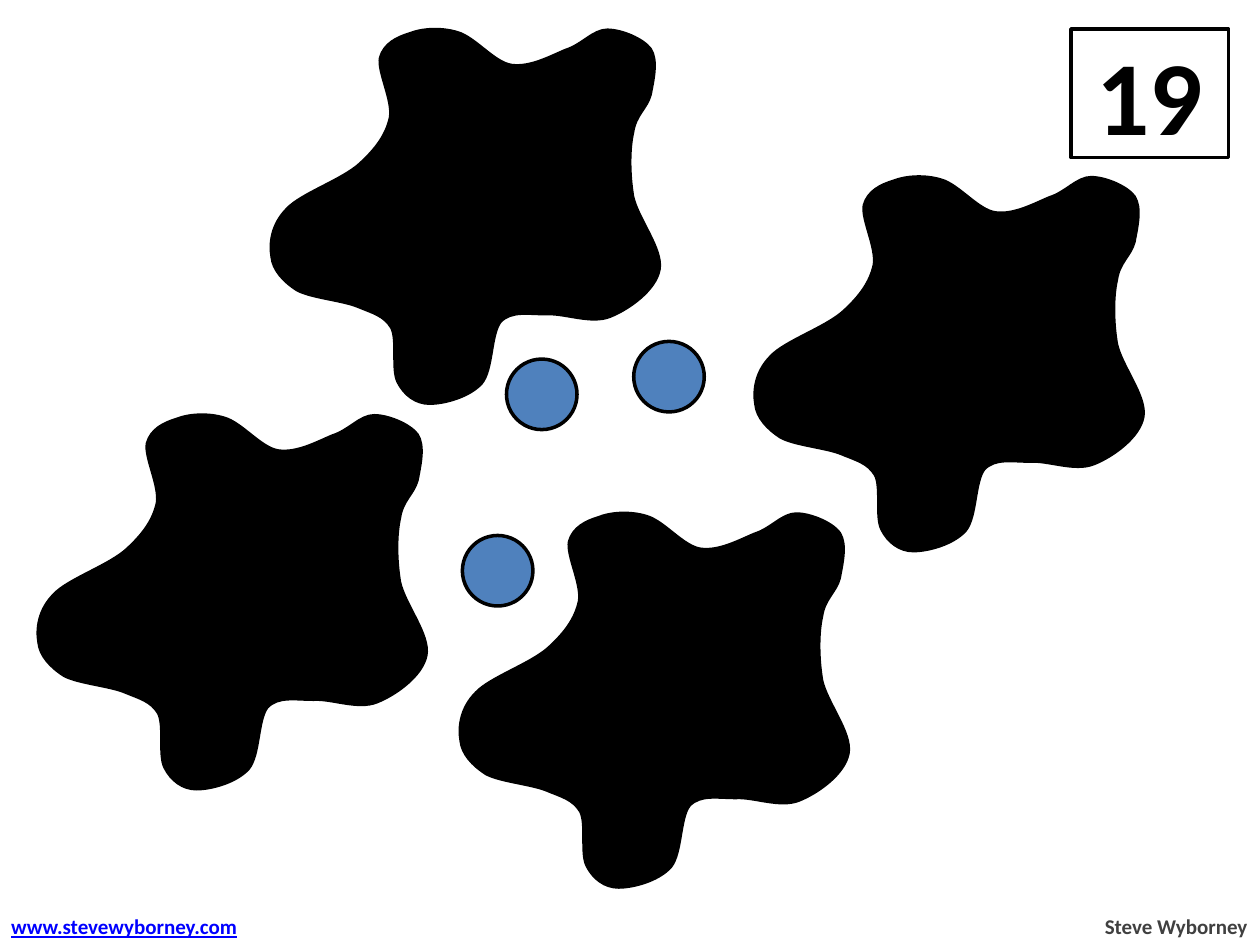
from dataclasses import dataclass

from lxml.etree import Element
from pptx import Presentation
from pptx.dml.color import RGBColor as RGB
from pptx.enum.shapes import MSO_SHAPE as Shape
from pptx.enum.text import MSO_ANCHOR as Anchor, MSO_AUTO_SIZE as AutoSize, PP_ALIGN as Align
from pptx.oxml.ns import qn
from pptx.util import Inches, Pt


@dataclass(frozen=True)
class Theme:
    font: str = "Calibri"
    paper: str = "FFFFFF"
    ink: str = "000000"
    dot: str = "4F81BD"
    credit: str = "404040"
    link: str = "0000FF"
    total_size: int = 60
    footer_size: int = 12
    outline: int = 2


THEME = Theme()

TOTAL = "19"
TOTAL_BOX = (8.5, 0.23, 1.25, 1.02)
FOOTERS = [
    ("Steve Wyborney", (8.66, 7.2, 1.34, 0.3), dict(color=THEME.credit, align=Align.RIGHT)),
    ("www.stevewyborney.com", (-0.01, 7.2, 2.05, 0.3), dict(color=THEME.link, underline=True)),
]

DOT_SIZE = 0.56
DOTS = [
    (3.67, 4.25), (4.1, 5.42), (2.58, 3.65), (5.9, 4.23), (3.61, 1.94),
    (4.02, 2.85), (5.85, 5.4), (7.08, 3.57), (5.03, 2.71), (7.02, 1.66),
    (3.28, 0.46), (1.34, 3.52), (2.63, 4.93), (4.78, 4.37), (2.36, 1.6),
    (7.85, 2.35), (0.83, 4.65), (4.31, 0.69), (6.24, 2.78),
]

# One splat outline: a start point, then curves of two control points and an end.
SPLAT_START = (0.51, 5.36)
SPLAT_CURVES = [
    ((0.4, 5.29), (0.32, 5.2), (0.31, 5.1)),
    ((0.29, 4.99), (0.31, 4.84), (0.43, 4.72)),
    ((0.54, 4.6), (0.87, 4.49), (1.01, 4.36)),
    ((1.14, 4.24), (1.22, 4.13), (1.25, 3.99)),
    ((1.27, 3.85), (1.15, 3.63), (1.17, 3.52)),
    ((1.2, 3.41), (1.3, 3.36), (1.4, 3.33)),
    ((1.5, 3.29), (1.65, 3.28), (1.78, 3.32)),
    ((1.92, 3.36), (2.07, 3.56), (2.21, 3.58)),
    ((2.36, 3.6), (2.52, 3.51), (2.64, 3.46)),
    ((2.77, 3.42), (2.86, 3.3), (2.97, 3.3)),
    ((3.08, 3.3), (3.25, 3.37), (3.31, 3.45)),
    ((3.37, 3.54), (3.33, 3.7), (3.31, 3.81)),
    ((3.28, 3.92), (3.19, 3.97), (3.17, 4.11)),
    ((3.14, 4.24), (3.14, 4.44), (3.17, 4.62)),
    ((3.21, 4.8), (3.41, 5.04), (3.38, 5.2)),
    ((3.35, 5.36), (3.14, 5.51), (2.99, 5.57)),
    ((2.84, 5.63), (2.63, 5.54), (2.49, 5.55)),
    ((2.34, 5.55), (2.21, 5.52), (2.12, 5.61)),
    ((2.04, 5.71), (2.06, 5.99), (1.97, 6.1)),
    ((1.87, 6.21), (1.67, 6.26), (1.56, 6.26)),
    ((1.45, 6.26), (1.36, 6.19), (1.31, 6.09)),
    ((1.26, 5.99), (1.31, 5.76), (1.26, 5.66)),
    ((1.2, 5.56), (1.11, 5.54), (0.99, 5.49)),
    ((0.87, 5.44), (0.62, 5.42), (0.51, 5.36)),
]
SPLAT_OFFSETS = [(0, 0), (3.35, 0.78), (1.85, -3.06), (5.69, -1.89)]


def paint(shape, fill):
    shape.shadow.inherit = False
    shape.fill.solid()
    shape.fill.fore_color.rgb = RGB.from_string(fill)
    shape.line.color.rgb = RGB.from_string(THEME.ink)
    shape.line.width = Pt(THEME.outline)


def add_preset(slide, preset, box, fill):
    shape = slide.shapes.add_shape(preset, *map(Inches, box))
    paint(shape, fill)
    return shape


def write(frame, text, size=THEME.footer_size, color=THEME.ink, align=Align.LEFT, underline=None):
    paragraph = frame.paragraphs[0]
    paragraph.alignment = align
    run = paragraph.add_run()
    run.text = text
    font = run.font
    font.name, font.size, font.bold, font.underline = THEME.font, Pt(size), True, underline
    font.color.rgb = RGB.from_string(color)


def add_splat(slide, dx, dy):
    """Draw the outline moved by (dx, dy), each three line steps joined into one curve."""
    def place(point):
        return Inches(point[0] + dx), Inches(point[1] + dy)

    builder = slide.shapes.build_freeform(*place(SPLAT_START))
    builder.add_line_segments([place(p) for curve in SPLAT_CURVES for p in curve], close=True)
    splat = builder.convert_to_shape()
    steps = list(splat.element.iter(qn("a:lnTo")))
    for first in range(0, 3 * len(SPLAT_CURVES), 3):
        curve = Element(qn("a:cubicBezTo"))
        steps[first].addprevious(curve)
        for step in steps[first:first + 3]:
            curve.append(step[0])
            step.getparent().remove(step)
    paint(splat, THEME.ink)


def main():
    deck = Presentation()
    deck.slide_width, deck.slide_height = Inches(10), Inches(7.5)
    slide = deck.slides.add_slide(deck.slide_layouts[6])

    total = add_preset(slide, Shape.RECTANGLE, TOTAL_BOX, THEME.paper)
    total.text_frame.vertical_anchor = Anchor.MIDDLE
    write(total.text_frame, TOTAL, size=THEME.total_size, align=Align.CENTER)

    for text, box, style in FOOTERS:
        frame = slide.shapes.add_textbox(*map(Inches, box)).text_frame
        frame.word_wrap = False
        frame.auto_size = AutoSize.SHAPE_TO_FIT_TEXT
        write(frame, text, **style)

    for left, top in DOTS:
        add_preset(slide, Shape.OVAL, (left, top, DOT_SIZE, DOT_SIZE), THEME.dot)
    for offset in SPLAT_OFFSETS:
        add_splat(slide, *offset)

    deck.save("out.pptx")


if __name__ == "__main__":
    main()
